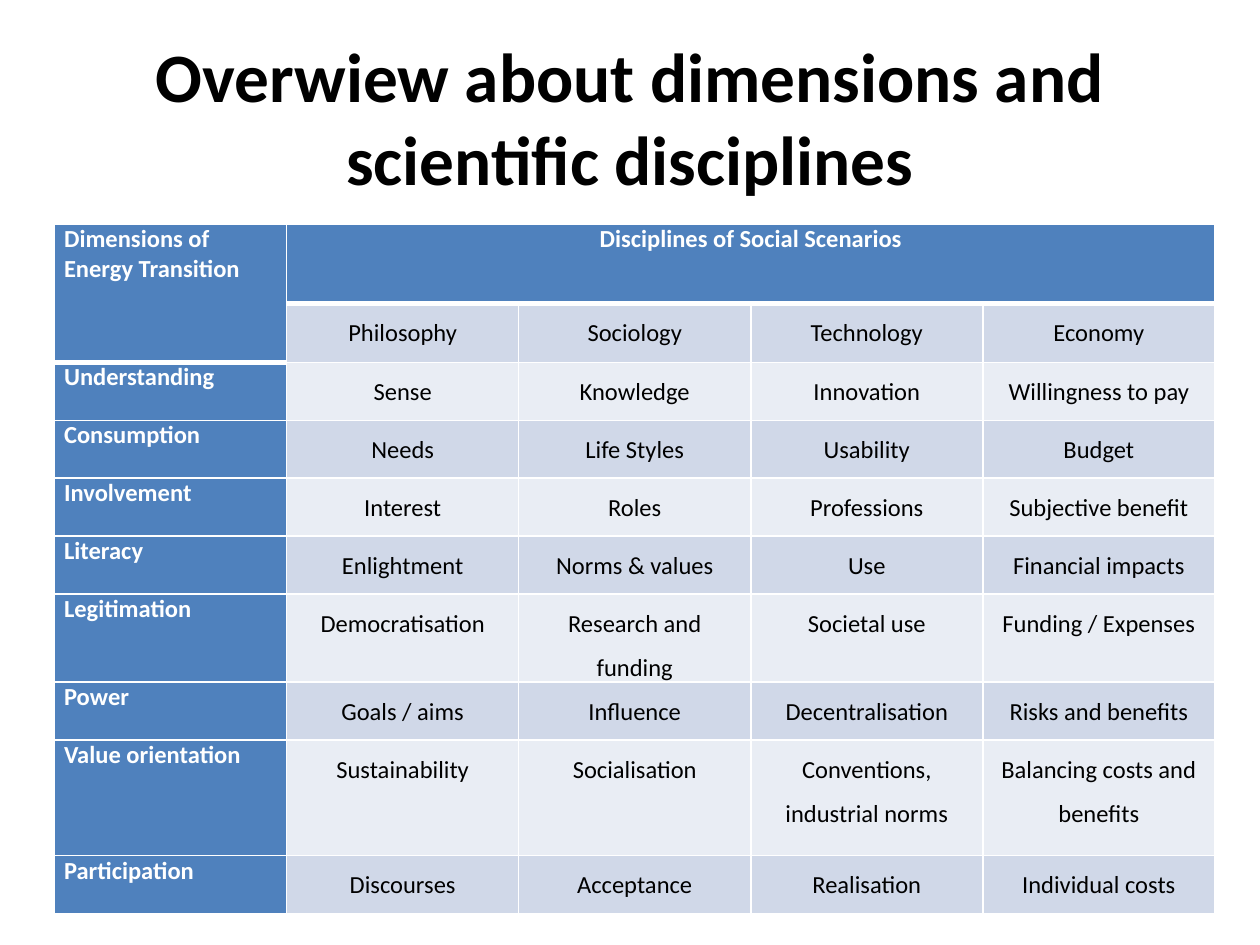
from dataclasses import dataclass

from lxml.etree import SubElement
from pptx import Presentation
from pptx.dml.color import RGBColor
from pptx.enum.text import MSO_ANCHOR, PP_ALIGN
from pptx.oxml.ns import qn
from pptx.util import Pt


@dataclass(frozen=True)
class Theme:
    font: str = "Calibri"
    title_size: float = 39.6
    table_size: float = 14
    text: str = "000000"
    header_text: str = "FFFFFF"
    header_fill: str = "4F81BD"
    bands: tuple = ("E9EDF4", "D0D8E8")
    border: str = "FFFFFF"


THEME = Theme()

TITLE = "Overwiew about dimensions and scientific disciplines"
CORNER = "Dimensions of Energy Transition"
GROUP = "Disciplines of Social Scenarios"
ROWS = [
    ("", "Philosophy", "Sociology", "Technology", "Economy"),
    ("Understanding", "Sense", "Knowledge", "Innovation", "Willingness to pay"),
    ("Consumption", "Needs", "Life Styles", "Usability", "Budget"),
    ("Involvement", "Interest", "Roles", "Professions", "Subjective benefit"),
    ("Literacy", "Enlightment", "Norms & values", "Use", "Financial impacts"),
    ("Legitimation", "Democratisation", "Research and funding", "Societal use",
     "Funding / Expenses"),
    ("Power", "Goals / aims", "Influence", "Decentralisation", "Risks and benefits"),
    ("Value orientation", "Sustainability", "Socialisation",
     "Conventions, industrial norms", "Balancing costs and benefits"),
    ("Participation", "Discourses", "Acceptance", "Realisation", "Individual costs"),
]

HEADER_HEIGHT, ROW_HEIGHT = 45.3, 33.07
DOUBLE_ROW = 8
COLUMN_WIDTH = 132.62


def style_paragraph(paragraph, size, color, bold, alignment):
    paragraph.alignment = alignment
    paragraph.font.name = THEME.font
    paragraph.font.size = Pt(size)
    paragraph.font.bold = bold
    paragraph.font.color.rgb = RGBColor.from_string(color)


def add_title(slide):
    shape = slide.shapes.add_textbox(Pt(36), Pt(21.6), Pt(648), Pt(90))
    frame = shape.text_frame
    frame.word_wrap = True
    frame.vertical_anchor = MSO_ANCHOR.MIDDLE
    frame.text = TITLE
    style_paragraph(frame.paragraphs[0], THEME.title_size, THEME.text, True,
                    PP_ALIGN.CENTER)


def set_borders(cell, top, bottom):
    properties = cell._tc.get_or_add_tcPr()
    for side, width in (("L", 1), ("R", 1), ("T", top), ("B", bottom)):
        line = SubElement(properties, qn(f"a:ln{side}"), w=str(Pt(width)))
        fill = SubElement(line, qn("a:solidFill"))
        SubElement(fill, qn("a:srgbClr"), val=THEME.border)


def fill_cell(cell, text, fill, header, centered, top=1, bottom=1):
    cell.margin_left = cell.margin_right = Pt(5.4)
    cell.margin_top = cell.margin_bottom = 0
    set_borders(cell, top, bottom)
    cell.fill.solid()
    cell.fill.fore_color.rgb = RGBColor.from_string(fill)
    cell.text = text
    paragraph = cell.text_frame.paragraphs[0]
    style_paragraph(paragraph, THEME.table_size,
                    THEME.header_text if header else THEME.text, header,
                    PP_ALIGN.CENTER if centered else PP_ALIGN.LEFT)
    if not header:
        paragraph.line_spacing = 1.5


def add_dimension_table(slide):
    row_count, column_count = len(ROWS) + 1, len(ROWS[0])
    heights = [HEADER_HEIGHT] + [ROW_HEIGHT] * len(ROWS)
    heights[DOUBLE_ROW] *= 2
    table = slide.shapes.add_table(
        row_count, column_count, Pt(31.2), Pt(128.2),
        Pt(COLUMN_WIDTH * column_count), Pt(sum(heights))).table
    for column in table.columns:
        column.width = Pt(COLUMN_WIDTH)
    for row, height in zip(table.rows, heights):
        row.height = Pt(height)

    # Header row, with a heavier rule beneath it
    header_texts = [CORNER, GROUP] + [""] * (column_count - 2)
    for column, text in enumerate(header_texts):
        fill_cell(table.cell(0, column), text, THEME.header_fill, True,
                  column > 0, bottom=3)

    # Dimension names on the left, banded disciplines on the right
    for row, texts in enumerate(ROWS, start=1):
        for column, text in enumerate(texts):
            header = column == 0
            fill = THEME.header_fill if header else THEME.bands[row % 2]
            heavy_top = row == 1 or (row == 2 and header)
            fill_cell(table.cell(row, column), text, fill, header, not header,
                      top=3 if heavy_top else 1,
                      bottom=3 if row == 1 and header else 1)

    # Spanning header cells
    table.cell(0, 0).merge(table.cell(1, 0))
    table.cell(0, 1).merge(table.cell(0, column_count - 1))


def main():
    presentation = Presentation()
    presentation.slide_width, presentation.slide_height = Pt(720), Pt(540)
    slide = presentation.slides.add_slide(presentation.slide_layouts[6])
    add_title(slide)
    add_dimension_table(slide)
    presentation.save("out.pptx")


if __name__ == "__main__":
    main()
